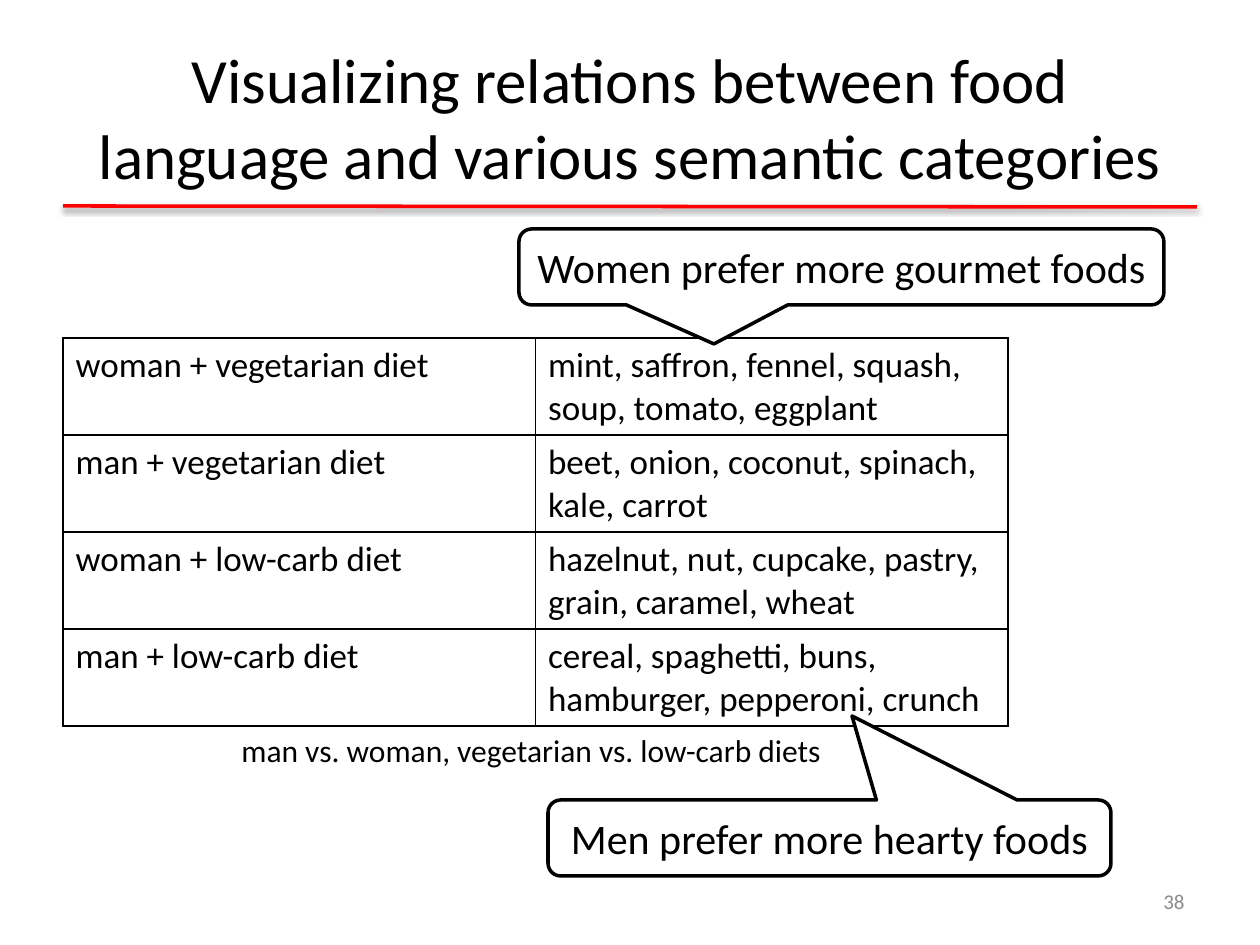
import lxml.etree
import pptx
import pptx.dml.color
import pptx.enum.shapes
import pptx.enum.text
import pptx.oxml
import pptx.oxml.ns
import pptx.util

EMU_PER_PX = 914400 / 126
BLACK = pptx.dml.color.RGBColor(0x00, 0x00, 0x00)
WHITE = pptx.dml.color.RGBColor(0xFF, 0xFF, 0xFF)
RED = pptx.dml.color.RGBColor(0xFF, 0x00, 0x00)
GRAY = pptx.dml.color.RGBColor(0x8C, 0x8C, 0x8C)
ALIGN = pptx.enum.text.PP_ALIGN
ANCHOR = pptx.enum.text.MSO_ANCHOR
NAMESPACE = pptx.oxml.ns.nsdecls("a")

DIET_WORDS = [
    ("woman + vegetarian diet", "mint, saffron, fennel, squash, soup, tomato, eggplant"),
    ("man + vegetarian diet", "beet, onion, coconut, spinach, kale, carrot"),
    ("woman + low-carb diet", "hazelnut, nut, cupcake, pastry, grain, caramel, wheat"),
    ("man + low-carb diet", "cereal, spaghetti, buns, hamburger, pepperoni, crunch"),
]


def px(*lengths):
    return [pptx.util.Emu(round(length * EMU_PER_PX)) for length in lengths]


def write_text(frame, text, size, color=BLACK, align=ALIGN.LEFT,
               anchor=ANCHOR.TOP, wrap=True, font="Calibri"):
    frame.word_wrap = wrap
    frame.vertical_anchor = anchor
    para = frame.paragraphs[0]
    para.alignment = align
    span = para.add_run()
    span.text = text
    span.font.name = font
    span.font.size = pptx.util.Pt(size)
    span.font.color.rgb = color


class SlideBuilder:
    def __init__(self, deck, line_width=2):
        layout = deck.slide_layouts.get_by_name("Title Only")
        self.page = deck.slides.add_slide(layout)
        self.line_width = pptx.util.Pt(line_width)

    def title(self, text, left, top, width, height):
        box = self.page.shapes.title
        box.left, box.top, box.width, box.height = px(left, top, width, height)
        write_text(box.text_frame, text, 36, align=ALIGN.CENTER, anchor=ANCHOR.MIDDLE)

    def rule(self, start_x, start_y, end_x, end_y):
        line = self.page.shapes.add_connector(
            pptx.enum.shapes.MSO_CONNECTOR.STRAIGHT, *px(start_x, start_y, end_x, end_y))
        line.line.color.rgb = RED
        line.line.width = self.line_width
        line._element.spPr.append(pptx.oxml.parse_xml(
            f'<a:effectLst {NAMESPACE}><a:outerShdw blurRad="39370" dist="20320" '
            'dir="5400000" rotWithShape="0"><a:srgbClr val="000000">'
            '<a:alpha val="38000"/></a:srgbClr></a:outerShdw></a:effectLst>'))

    def label(self, text, left, top, width, height, **style):
        box = self.page.shapes.add_textbox(*px(left, top, width, height))
        write_text(box.text_frame, text, **style)

    def table(self, rows, left, top, column_width, row_height):
        column_count = len(rows[0])
        frame = self.page.shapes.add_table(
            len(rows), column_count,
            *px(left, top, column_width * column_count, row_height * len(rows)))
        grid = frame.table
        grid.first_row = grid.horz_banding = False
        for row, texts in enumerate(rows):
            for column, text in enumerate(texts):
                cell = grid.cell(row, column)
                cell.fill.background()
                write_text(cell.text_frame, text, 20)
                self.cell_borders(cell)

    def cell_borders(self, cell):
        properties = cell._tc.get_or_add_tcPr()
        for index, side in enumerate(("lnL", "lnR", "lnT", "lnB")):
            properties.insert(index, pptx.oxml.parse_xml(
                f'<a:{side} {NAMESPACE} w="12700"><a:solidFill>'
                f'<a:srgbClr val="{BLACK}"/></a:solidFill></a:{side}>'))

    def callout(self, text, left, top, width, height, tip):
        shape = self.page.shapes.add_shape(
            pptx.enum.shapes.MSO_SHAPE.ROUNDED_RECTANGULAR_CALLOUT,
            *px(left, top, width, height))
        # The tip is measured from the centre, as a share of the box
        shape.adjustments[0] = (tip[0] - left) / width - 0.5
        shape.adjustments[1] = (tip[1] - top) / height - 0.5
        shape.shadow.inherit = False
        shape.fill.solid()
        shape.fill.fore_color.rgb = WHITE
        shape.line.color.rgb = BLACK
        shape.line.width = self.line_width
        write_text(shape.text_frame, text, 24, align=ALIGN.CENTER, anchor=ANCHOR.MIDDLE)


def main():
    deck = pptx.Presentation()
    deck.slide_width, deck.slide_height = px(1260, 945)
    slide = SlideBuilder(deck)

    # Heading with its red rule
    slide.rule(63, 206, 1197, 207)
    slide.title("Visualizing relations between food language and various semantic categories",
                63, 38, 1134, 157)

    # Page number and table caption
    slide.label("38", 903, 876, 294, 50, size=12, color=GRAY,
                align=ALIGN.RIGHT, anchor=ANCHOR.MIDDLE)
    slide.label("man vs. woman, vegetarian vs. low-carb diets", 229, 725, 611, 50,
                size=18, wrap=False)

    # Words for each pair of categories
    slide.table(DIET_WORDS, left=63, top=338, column_width=472.5, row_height=97)

    # Findings
    slide.callout("Women prefer more gourmet foods", 519, 229, 645, 76, tip=(714, 344))
    slide.callout("Men prefer more hearty foods", 548, 800, 563, 76, tip=(852, 716))

    deck.save("out.pptx")


if __name__ == "__main__":
    main()
